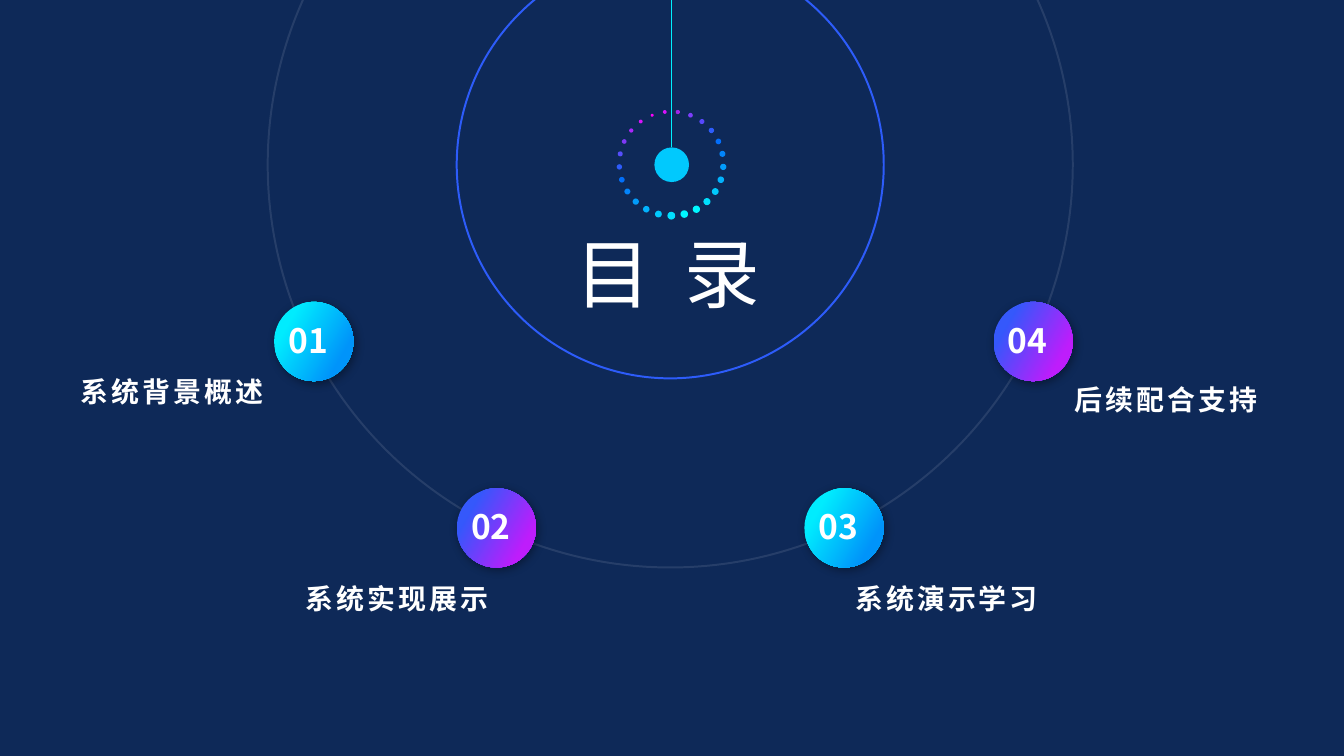
from dataclasses import dataclass
from math import cos, radians, sin

from lxml.etree import SubElement
from pptx import Presentation
from pptx.dml.color import RGBColor
from pptx.enum.shapes import MSO_CONNECTOR, MSO_SHAPE
from pptx.enum.text import MSO_ANCHOR, MSO_AUTO_SIZE, PP_ALIGN
from pptx.oxml.ns import qn
from pptx.util import Pt


@dataclass(frozen=True)
class Theme:
    font: str = "Noto Sans CJK SC"
    background: str = "0E2958"
    text: str = "FFFFFF"
    orbit: str = "FFFFFF"
    inner_orbit: str = "2D5CFA"
    thread: str = "00F0FF"
    pin: str = "01C9FD"
    shadow: str = "000000"
    cyan: tuple = ("00ECFE", "0094FA")
    violet: tuple = ("3558FB", "BE1DFB")
    title_size: float = 76.8
    number_size: float = 34.1
    label_size: float = 28.4


THEME = Theme()
CENTER = (681.5, 167.4)
PIN_CENTER = (683, 167.4)
RING_CENTER = (682.6, 166.3)
RING_RADIUS = 52.9
SMALLEST_DOT = 14
# Counterclockwise from the bottom of the ring
RING_COLORS = (
    "01DEFF 00F7FF 00F7FF 00DFFE 01C9FD 02B2FD 029CFD 0285FB 036EFA "
    "2D5CFA 5748FD 7D3EFC 9F26E7 D813FB FC02F9 D912FC AA27FB 7F39F6 "
    "564EFC 2E5CFB 026FF9 0384FB 029CFB 02B2FD 01C9FD"
).split()

# Number, centre of the circle, gradient, label, top left of the label
STATIONS = [
    ("01", (319, 347), THEME.cyan, "系统背景概述", (74.9, 376.6)),
    ("02", (504.7, 536.4), THEME.violet, "系统实现展示", (303.8, 586.8)),
    ("03", (858.2, 536.4), THEME.cyan, "系统演示学习", (862.6, 586.8)),
    ("04", (1050.5, 347), THEME.violet, "后续配合支持", (1085.8, 384.5)),
]


def rgb(color):
    return RGBColor.from_string(color)


def add_alpha(color_parent, percent):
    """Set the opacity of the colour held by an XML fill or shadow."""
    color = color_parent.find(qn("a:srgbClr"))
    SubElement(color, qn("a:alpha")).set("val", str(percent * 1000))


def add_circle(s, center, radius, fill=None, gradient=None, line=None):
    x, y = center
    sp = s.shapes.add_shape(MSO_SHAPE.OVAL, Pt(x - radius), Pt(y - radius),
                            Pt(2 * radius), Pt(2 * radius))
    sp.shadow.inherit = False
    if fill:
        sp.fill.solid()
        sp.fill.fore_color.rgb = rgb(fill)
    elif gradient:
        sp.fill.gradient()
        sp.fill.gradient_angle = 330
        for stop, color, position in zip(sp.fill.gradient_stops, gradient, (0.21, 0.8)):
            stop.color.rgb = rgb(color)
            stop.position = position
    else:
        sp.fill.background()
    if line:
        sp.line.color.rgb = rgb(line)
        sp.line.width = Pt(2)
    else:
        sp.line.fill.background()
    return sp


def add_shadow(sp):
    effects = sp._element.spPr.find(qn("a:effectLst"))
    shadow = SubElement(effects, qn("a:outerShdw"), blurRad=str(Pt(10)),
                        dist=str(Pt(3)), dir=str(45 * 60000), algn="tl", rotWithShape="0")
    SubElement(shadow, qn("a:srgbClr"), val=THEME.shadow)
    add_alpha(shadow, 40)


def write(sp, text, size, bold=False, spacing=0):
    tf = sp.text_frame
    tf.word_wrap = False
    tf.auto_size = MSO_AUTO_SIZE.NONE
    tf.vertical_anchor = MSO_ANCHOR.MIDDLE
    p = tf.paragraphs[0]
    p.alignment = PP_ALIGN.LEFT
    p.line_spacing = 1.0
    r = p.add_run()
    r.text = text
    r.font.size = Pt(size)
    r.font.bold = bold
    r.font.color.rgb = rgb(THEME.text)
    r.font.name = THEME.font
    r_pr = r._r.get_or_add_rPr()
    r_pr.set("spc", str(round(spacing * 100)))
    SubElement(r_pr, qn("a:ea"), typeface=THEME.font)


def add_text(s, text, left, top, width, height, **style):
    sp = s.shapes.add_textbox(Pt(left), Pt(top), Pt(width), Pt(height))
    write(sp, text, **style)


def set_title(s, text):
    sp = s.shapes.title
    sp.left, sp.top, sp.width, sp.height = Pt(578.2), Pt(226.8), Pt(216), Pt(100)
    write(sp, text, size=THEME.title_size, spacing=8.6)


def add_orbits(s):
    outer = add_circle(s, CENTER, 409.3, line=THEME.orbit)
    add_alpha(outer.line._ln.find(qn("a:solidFill")), 10)
    add_circle(s, CENTER, 217.1, line=THEME.inner_orbit)


def add_pendulum(s):
    x, _ = PIN_CENTER
    pin = add_circle(s, PIN_CENTER, 17.6, fill=THEME.pin)
    thread = s.shapes.add_connector(MSO_CONNECTOR.STRAIGHT, Pt(x), 0, Pt(x), pin.top)
    thread.end_connect(pin, 0)
    thread.line.color.rgb = rgb(THEME.thread)
    thread.line.width = Pt(0.75)
    SubElement(thread._element.spPr, qn("a:effectLst"))


def add_dot_ring(s):
    """Dots shrink along the ring towards the smallest one."""
    x, y = RING_CENTER
    for i, color in enumerate(RING_COLORS):
        angle = radians(i * 360 / len(RING_COLORS))
        center = (x + RING_RADIUS * sin(angle), y + RING_RADIUS * cos(angle))
        diameter = 3 + 5 * (abs(i - SMALLEST_DOT) / SMALLEST_DOT) ** 0.7
        add_circle(s, center, diameter / 2, fill=color)


def add_station(s, number, center, gradient, label, label_at):
    x, y = center
    add_shadow(add_circle(s, center, 40.3, gradient=gradient))
    add_text(s, number, x - 32.8, y - 25.9, 56.9, 49, size=THEME.number_size, bold=True)
    add_text(s, label, *label_at, 205.2, 41.8, size=THEME.label_size, bold=True, spacing=3)


def main():
    prs = Presentation()
    prs.slide_width, prs.slide_height = Pt(1366.56), Pt(768.24)
    s = prs.slides.add_slide(prs.slide_layouts[5])
    s.background.fill.solid()
    s.background.fill.fore_color.rgb = rgb(THEME.background)
    set_title(s, "目 录")
    add_orbits(s)
    add_pendulum(s)
    add_dot_ring(s)
    for station in STATIONS:
        add_station(s, *station)
    prs.save("out.pptx")


if __name__ == "__main__":
    main()
